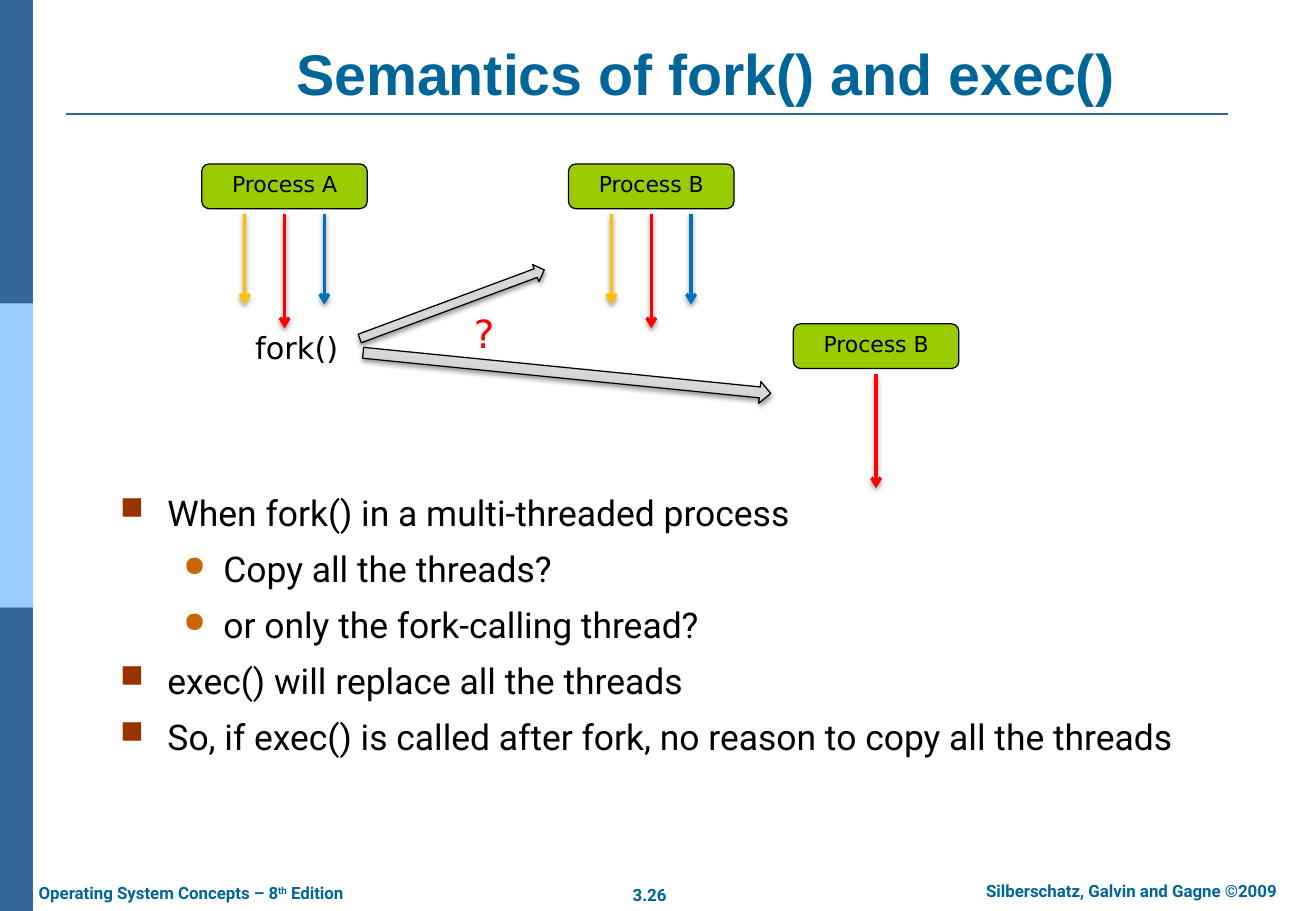
import lxml.etree
import pptx
import pptx.dml.color
import pptx.enum.shapes
import pptx.enum.text
import pptx.oxml
import pptx.oxml.ns
import pptx.util

SHAPE = pptx.enum.shapes.MSO_SHAPE
ALIGN = pptx.enum.text.PP_ALIGN
ANCHOR = pptx.enum.text.MSO_ANCHOR
COLORS = {
    "navy": "336699", "sky": "99CCFF", "teal": "006699", "black": "000000",
    "rust": "993300", "orange": "CC6600", "lime": "99CC00", "gold": "FFC000",
    "red": "FF0000", "blue": "0070C0",
    "gray1": "BDBDBD", "gray2": "D1D1D1", "gray3": "EEEEEE",
}
BULLETS = [("■", "rust", 90, 0.39, 0.39), ("●", "orange", 80, 0.85, 0.33)]
THREADS = {"gold": (0.26, 2.03), "red": (0.5, 2.56), "blue": (0.74, 2.03)}
POINTS = [
    (0, "When fork() in a multi-threaded process"),
    (1, "Copy all the threads?"),
    (1, "or only the fork-calling thread?"),
    (0, "exec() will replace all the threads"),
    (0, "So, if exec() is called after fork, no reason to copy all the threads"),
]
WIDTH, HEIGHT = pptx.util.Inches(10.83), pptx.util.Inches(7.5)
COL, ROW = WIDTH / 100, HEIGHT / 100


def place(x, y, w, h):
    """Turn a box in columns and rows into slide lengths."""
    return int(x * COL), int(y * ROW), int(w * COL), int(h * ROW)


def rgb(name):
    """Look up a named colour."""
    return pptx.dml.color.RGBColor.from_string(COLORS[name])


def sub(parent, tag, **attrs):
    """Add a drawing element with its attributes."""
    node = lxml.etree.SubElement(parent, pptx.oxml.ns.qn("a:" + tag))
    for key, value in attrs.items():
        node.set(key, str(value))
    return node


def set_shadow(sp, shown):
    """Give a shape a soft shadow below it, or none."""
    effects = sub(sp._element.spPr, "effectLst")
    if shown:
        outer = sub(effects, "outerShdw", blurRad=pptx.util.Pt(3.1),
                    dist=pptx.util.Pt(1.6), dir=5400000, rotWithShape=0)
        sub(sub(outer, "srgbClr", val=COLORS["black"]), "alpha", val=38000)


def style(p, size, font, color, bold=False):
    """Format every run of a paragraph."""
    for r in p.runs:
        r.font.size, r.font.name, r.font.bold = pptx.util.Pt(size), font, bold
        r.font.color.rgb = rgb(color)


def set_margins(tf, side, top):
    """Set the inner margins in inches."""
    tf.margin_left = tf.margin_right = pptx.util.Inches(side)
    tf.margin_top = tf.margin_bottom = pptx.util.Inches(top)


def add_text(s, box, text, size, font, color, bold=False, align=ALIGN.LEFT,
             wrap=False, anchor=ANCHOR.TOP, margins=(0.1, 0.05)):
    """Add a text box of one paragraph and return the paragraph."""
    tf = s.shapes.add_textbox(*place(*box)).text_frame
    tf.text, tf.word_wrap, tf.vertical_anchor = text, wrap, anchor
    set_margins(tf, *margins)
    p = tf.paragraphs[0]
    p.alignment = align
    style(p, size, font, color, bold)
    return p


def add_line(s, x1, y1, x2, y2, color, width, arrow=False):
    """Draw a line, with arrowhead and shadow if it is an arrow."""
    start, end = place(x1, y1, x2, y2)[:2], place(x2, y2, 0, 0)[:2]
    line = s.shapes.add_connector(pptx.enum.shapes.MSO_CONNECTOR.STRAIGHT, *start, *end)
    line.line.color.rgb, line.line.width = rgb(color), pptx.util.Pt(width)
    if arrow:
        sub(line.line._get_or_add_ln(), "tailEnd", type="arrow")
    set_shadow(line, arrow)


def add_rail(s, x, y, w, h):
    """Stack three coloured bands down the box."""
    for i, color in enumerate(["navy", "sky", "navy"]):
        sp = s.shapes.add_shape(SHAPE.RECTANGLE, *place(x, y + i * h / 3, w, h / 3))
        sp.fill.solid()
        sp.fill.fore_color.rgb = rgb(color)
        sp.line.fill.background()
        set_shadow(sp, False)


def add_header(s, x, y, w, h):
    """Set the title in the box, above a rule."""
    add_text(s, (x, y, w, h), "Semantics of fork() and exec()", 34, "Arial", "teal",
             True, ALIGN.CENTER, True, ANCHOR.BOTTOM)
    add_line(s, x - 7.2, y + h + 0.13, x + w - 1.67, y + h + 0.13, "navy", 1.5)


def add_footer(s, x, y, w, h):
    """Set edition, page number and copyright along the box."""
    look = 10, "Roboto", "teal", True
    p = add_text(s, (x, y + 0.27, 0.27 * w, h), "Operating System Concepts – 8", *look)
    for text in ["th", " Edition"]:
        p.add_run().text = text
    style(p, *look)
    p.runs[1].font._element.set("baseline", "30000")
    add_text(s, (x + 0.46 * w, y + 0.4, 0.05 * w, h), "3.26", *look, ALIGN.CENTER)
    add_text(s, (x + 0.72 * w, y, 0.28 * w, h), "Silberschatz, Galvin and Gagne ©2009",
             *look, ALIGN.CENTER, True)


def add_process(s, x, y, w, h, name, threads):
    """Draw a process with its threads running down from it."""
    sp = s.shapes.add_shape(SHAPE.ROUNDED_RECTANGLE, *place(x, y, w, h))
    sp.fill.solid()
    sp.fill.fore_color.rgb = rgb("lime")
    sp.line.color.rgb, sp.line.width = rgb("black"), pptx.util.Pt(0.75)
    set_shadow(sp, False)
    tf = sp.text_frame
    tf.text, tf.word_wrap, tf.vertical_anchor = name, False, ANCHOR.TOP
    set_margins(tf, 0.07, 0.04)
    tf.paragraphs[0].alignment = ALIGN.CENTER
    style(tf.paragraphs[0], 13, "DejaVu Sans", "black")
    for color in threads:
        share, length = THREADS[color]
        top = y + 1.11 * h
        add_line(s, x + share * w, top, x + share * w, top + length * h, color, 2, True)


def add_branch(s, x, y, w, h, turn):
    """Draw a turned gray block arrow."""
    sp = s.shapes.add_shape(SHAPE.RIGHT_ARROW, *place(x, y, w, h))
    sp.rotation = turn
    sp.fill.gradient()
    grad = sp._element.spPr.find(pptx.oxml.ns.qn("a:gradFill"))
    for node in list(grad):
        grad.remove(node)
    stops = sub(grad, "gsLst")
    for pos, color in [(0, "gray1"), (35, "gray2"), (100, "gray3")]:
        sub(sub(stops, "gs", pos=pos * 1000), "srgbClr", val=COLORS[color])
    sub(grad, "lin", ang=270 * 60000, scaled=1)
    sp.line.color.rgb, sp.line.width = rgb("black"), pptx.util.Pt(0.75)
    set_shadow(sp, True)


def add_diagram(s, x, y, w, h):
    """Show process A forking into two possible forms of process B."""
    pw, ph = 0.28 * w, 0.14 * h
    add_process(s, x, y, pw, ph, "Process A", THREADS)
    add_process(s, x + 0.62 * w, y, pw, ph, "Process B", THREADS)
    add_process(s, x + w, y + 0.5 * h, pw, ph, "Process B", ["red"])
    look = "DejaVu Sans", "black"
    add_text(s, (x + 3.42, y + 0.5 * h, 8.13, 5.07), "fork()", 18, *look, margins=(0.07, 0.04))
    add_text(s, (x + 20.03, y + 0.44 * h, 2.95, 6.13), "?", 23, "DejaVu Sans", "red",
             margins=(0.07, 0.04))
    add_branch(s, x + 11.54, y + 0.41 * h, 14.96, 2, 339.6)
    add_branch(s, x + 12.19, y + 0.62 * h, 31.12, 2.4, 5.7)


def add_points(s, x, y, w, h):
    """List the points with bullets on two levels."""
    tf = s.shapes.add_textbox(*place(x, y, w, h)).text_frame
    tf.word_wrap = True
    set_margins(tf, 0.1, 0.05)
    for i, (level, text) in enumerate(POINTS):
        p = tf.add_paragraph() if i else tf.paragraphs[0]
        p.text, p.level = text, level
        if i:
            p.space_before = pptx.util.Pt(8)
        char, color, size, left, hang = BULLETS[level]
        ppr = p._p.get_or_add_pPr()
        ppr.set("marL", str(pptx.util.Inches(left)))
        ppr.set("indent", str(-pptx.util.Inches(hang)))
        sub(sub(ppr, "buClr"), "srgbClr", val=COLORS[color])
        sub(ppr, "buSzPct", val=size * 1000)
        sub(ppr, "buChar", char=char)
        style(p, 21, "Roboto", "black")


def main():
    """Build the slide and save it."""
    prs = pptx.Presentation()
    prs.slide_width, prs.slide_height = WIDTH, HEIGHT
    s = prs.slides.add_slide(prs.slide_layouts[6])
    add_rail(s, 0, 0, 2.5, 100)
    add_header(s, 12.19, 4, 82.83, 8.4)
    add_footer(s, 2.03, 96, 97.6, 3.73)
    add_points(s, 8.22, 53.2, 90.03, 35.07)
    add_diagram(s, 15.33, 18, 44.95, 35.1)
    prs.save("out.pptx")


if __name__ == "__main__":
    main()
